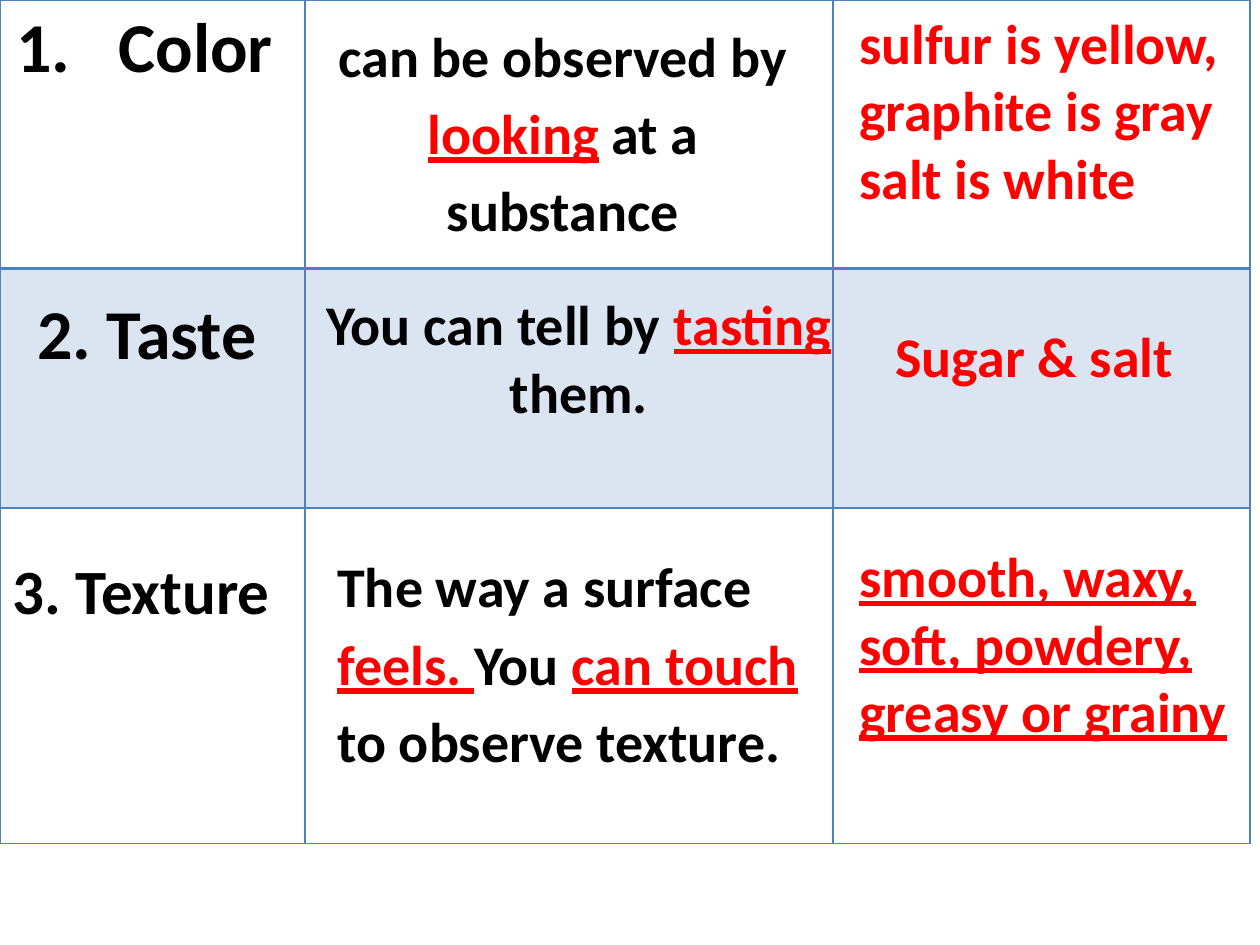
import pptx
import pptx.dml.color
import pptx.enum.text
import pptx.oxml
import pptx.oxml.ns
import pptx.util
from pptx.util import Cm

BLACK, RED, BLUE = "000000", "FF0000", "4F81BD"
CENTER = pptx.enum.text.PP_ALIGN.CENTER
LEFT = pptx.enum.text.PP_ALIGN.LEFT
NAMESPACE = pptx.oxml.ns.nsdecls("a")


def color(hex_value):
    return pptx.dml.color.RGBColor.from_string(hex_value)


def write_runs(paragraph, size, runs):
    """Add bold runs, each given as (text, color, underlined)."""
    for text, hex_value, underlined in runs:
        run = paragraph.add_run()
        run.text = text
        font_format = {"name": "Calibri", "size": pptx.util.Pt(size),
                       "bold": True, "underline": underlined}
        for name, value in font_format.items():
            setattr(run.font, name, value)
        run.font.color.rgb = color(hex_value)


presentation = pptx.Presentation()
presentation.slide_width, presentation.slide_height = Cm(25.4), Cm(19.05)
slide = presentation.slides.add_slide(presentation.slide_layouts[6])

# Table grid
column_widths = [6.15, 10.64, 8.41]
row_heights = [5.41, 4.83, 6.76]
table = slide.shapes.add_table(3, 3, 0, 0, Cm(sum(column_widths)), Cm(sum(row_heights))).table
for flag in ("first_row", "horz_banding"):
    setattr(table, flag, False)
for column, width in zip(table.columns, column_widths):
    column.width = Cm(width)
for row_index, (row, height) in enumerate(zip(table.rows, row_heights)):
    row.height = Cm(height)
    for cell in row.cells:
        properties = cell._tc.get_or_add_tcPr()
        for side in "LRTB":
            thick = (row_index, side) in ((0, "B"), (1, "T"))
            properties.append(pptx.oxml.parse_xml(
                f'<a:ln{side} {NAMESPACE} w="{pptx.util.Pt(2 if thick else 1)}"><a:solidFill>'
                f'<a:srgbClr val="{BLUE}"/></a:solidFill></a:ln{side}>'))
        if row_index == 1:
            cell.fill.solid()
            cell.fill.fore_color.rgb = color(BLUE)
            fill_color = properties.find(".//" + pptx.oxml.ns.qn("a:solidFill") + "[last()]")
            fill_color = properties.findall(pptx.oxml.ns.qn("a:solidFill"))[0][0]
            fill_color.append(pptx.oxml.parse_xml(f'<a:alpha {NAMESPACE} val="20000"/>'))
        else:
            cell.fill.background()

# Numbered heading in the first cell
paragraph = table.cell(0, 0).text_frame.paragraphs[0]
paragraph.alignment = CENTER
write_runs(paragraph, 40, [("Color ", BLACK, False)])
paragraph_properties = paragraph._p.get_or_add_pPr()
for name, length in {"marL": Cm(2.06), "indent": Cm(-2.06)}.items():
    paragraph_properties.set(name, str(length))
paragraph_properties.append(pptx.oxml.parse_xml(
    f'<a:buFont {NAMESPACE} typeface="+mj-lt"/>'))
paragraph_properties.append(pptx.oxml.parse_xml(
    f'<a:buAutoNum {NAMESPACE} type="arabicPeriod"/>'))

# Text over the grid: box in cm, size, alignment, line spacing, runs
texts = [
    ((6.27, 0.1, 10.16, 4.88), 32, CENTER, 1.15,
     [("can be observed by ", BLACK, False), ("looking", RED, True),
      (" at a substance", BLACK, False)]),
    ((17.07, 0.05, 7.82, 4.37), 32, LEFT, 1,
     [("sulfur is yellow, graphite is gray salt is white", RED, False)]),
    ((6.27, 5.72, 10.8, 3), 32, CENTER, 1,
     [("You can tell by ", BLACK, False), ("tasting ", RED, True), ("them.", BLACK, False)]),
    ((17.07, 6.35, 7.82, 1.63), 32, CENTER, 1, [("Sugar & salt ", RED, False)]),
    ((6.55, 10.8, 9.86, 6.35), 32, LEFT, 1.15,
     [("The way a surface ", BLACK, False), ("feels. ", RED, True), ("You ", BLACK, False),
      ("can touch ", RED, True), ("to observe texture.", BLACK, False)]),
    ((17.07, 10.8, 8.33, 4.37), 32, LEFT, 1,
     [("smooth, waxy, soft, powdery, greasy or grainy", RED, True)]),
    ((0, 5.72, 5.92, 1.96), 40, CENTER, 1, [("2. Taste", BLACK, False)]),
    ((0, 11, 6.15, 1.8), 36, LEFT, 1, [("3. Texture", BLACK, False)]),
]
for box, size, alignment, line_spacing, runs in texts:
    text_frame = slide.shapes.add_textbox(*map(Cm, box)).text_frame
    frame_format = {"word_wrap": True,
                    "auto_size": pptx.enum.text.MSO_AUTO_SIZE.SHAPE_TO_FIT_TEXT}
    for name, value in frame_format.items():
        setattr(text_frame, name, value)
    paragraph = text_frame.paragraphs[0]
    for name, value in {"alignment": alignment, "line_spacing": line_spacing}.items():
        setattr(paragraph, name, value)
    write_runs(paragraph, size, runs)

presentation.save("out.pptx")
